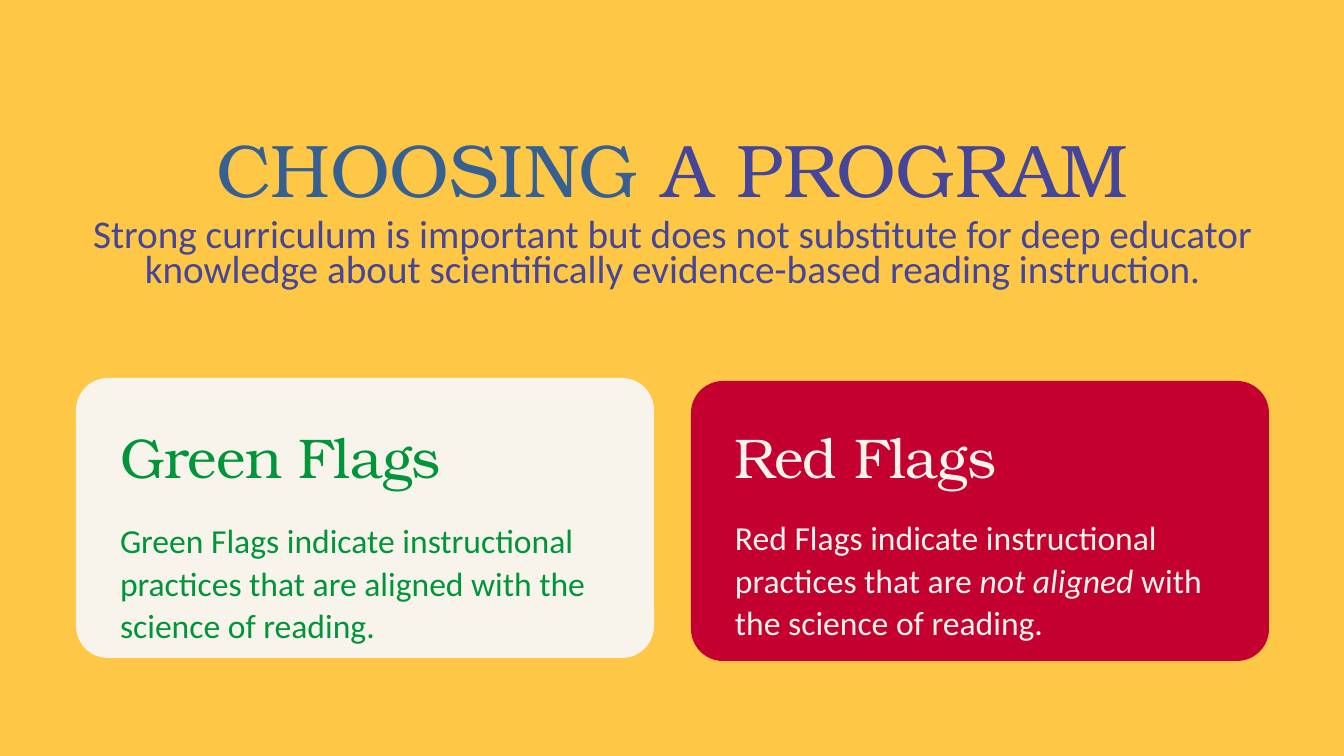
from pptx import Presentation
from pptx.dml.color import RGBColor
from pptx.enum.shapes import MSO_SHAPE
from pptx.enum.text import MSO_ANCHOR, PP_ALIGN
from pptx.util import Pt

EMU_PER_PX = 914400 / 100.8
SLIDE_WIDTH, SLIDE_HEIGHT = 1344, 756

YELLOW = RGBColor(0xFE, 0xC8, 0x46)
CREAM = RGBColor(0xF8, 0xF4, 0xEB)
RED = RGBColor(0xC3, 0x00, 0x2F)
GREEN = RGBColor(0x00, 0x95, 0x3A)
BLUE = RGBColor(0x37, 0x60, 0x92)
INDIGO = RGBColor(0x45, 0x46, 0x99)

SERIF, SANS = "TeX Gyre Bonum", "Calibri"
ROUNDED = MSO_SHAPE.ROUNDED_RECTANGLE
TOP = MSO_ANCHOR.TOP
LEFT, CENTER = PP_ALIGN.LEFT, PP_ALIGN.CENTER


def px(length):
    return round(length * EMU_PER_PX)


def add_run(paragraph, text, *, font, size, color, italic=False, tracking=0):
    """Add formatted text; tracking is in hundredths of a point."""
    run = paragraph.add_run()
    run.text = text
    run.font.name = font
    run.font.size = Pt(size)
    run.font.color.rgb = color
    if italic:
        run.font.italic = True
    if tracking:
        run.font._element.set("spc", str(tracking))


class FlagSlide:
    corner_radius = 32

    def __init__(self, presentation):
        self.slide = presentation.slides.add_slide(presentation.slide_layouts[6])

    def background(self, color):
        fill = self.slide.background.fill
        fill.solid()
        fill.fore_color.rgb = color

    def card(self, left, top, width, height, color):
        shape = self.slide.shapes.add_shape(ROUNDED, px(left), px(top), px(width), px(height))
        shape.adjustments[0] = self.corner_radius / height
        shape.shadow.inherit = False
        shape.fill.solid()
        shape.fill.fore_color.rgb = color
        shape.line.fill.background()

    def text(self, left, top, width, height, runs, line_spacing, align=LEFT, **style):
        """Add one paragraph of (text, style overrides) runs."""
        box = self.slide.shapes.add_textbox(px(left), px(top), px(width), px(height))
        frame = box.text_frame
        frame.word_wrap = True
        frame.vertical_anchor = TOP
        frame.margin_left = frame.margin_right = frame.margin_top = frame.margin_bottom = 0
        paragraph = frame.paragraphs[0]
        paragraph.alignment = align
        paragraph.line_spacing = Pt(line_spacing)
        for text, overrides in runs:
            add_run(paragraph, text, **{**style, **overrides})


def main():
    presentation = Presentation()
    presentation.slide_width = px(SLIDE_WIDTH)
    presentation.slide_height = px(SLIDE_HEIGHT)
    page = FlagSlide(presentation)
    page.background(YELLOW)

    # Title and introduction
    page.text(88, 118, 1169, 91, [("CHOOSING", {"color": BLUE}), (" A PROGRAM", {})],
              67.2, CENTER, font=SERIF, size=53.3, color=INDIGO)
    introduction = ("Strong curriculum is important but does not substitute for deep educator "
                    "knowledge about scientifically evidence-based reading instruction.")
    page.text(88, 222, 1169, 108, [(introduction, {})],
              24.6, CENTER, font=SANS, size=28, color=INDIGO)

    # Flag cards: left, card top, body top, fill, text colour, heading, body
    cards = [
        (76, 378, 518, CREAM, GREEN, "Green Flags",
         [("Green Flags indicate instructional practices that are aligned "
           "with the science of reading.", {})]),
        (691, 381, 515, RED, CREAM, "Red Flags",
         [("Red Flags indicate instructional practices that are ", {}),
          ("not aligned ", {"italic": True}),
          ("with the science of reading.", {})]),
    ]
    for left, card_top, body_top, fill, color, heading, body in cards:
        page.card(left, card_top, 578, 280, fill)
        page.text(left + 44, 417, 490, 71, [(heading, {})],
                  52, font=SERIF, size=40, color=color, tracking=-40)
        page.text(left + 44, body_top, 483, 126, body,
                  30.3, font=SANS, size=24, color=color)

    presentation.save("out.pptx")


if __name__ == "__main__":
    main()
